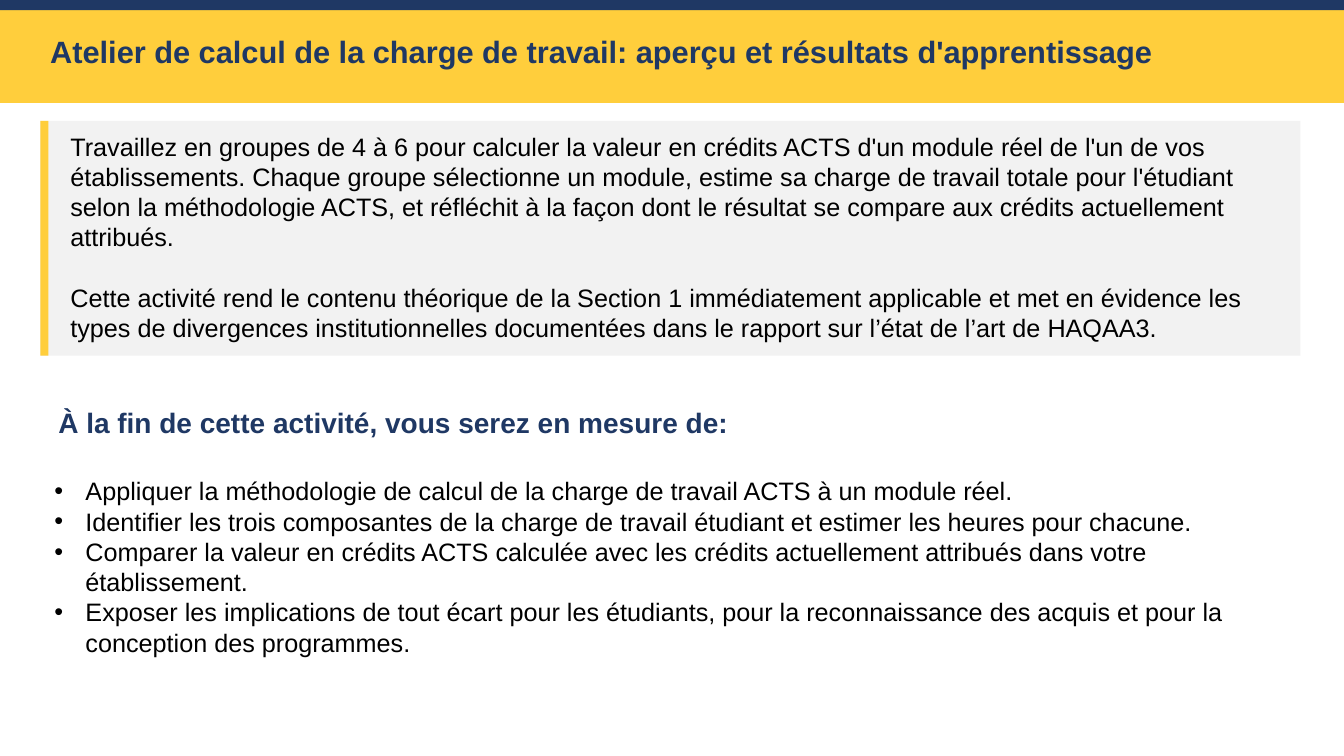
from dataclasses import dataclass

from lxml.etree import SubElement
from pptx import Presentation
from pptx.dml.color import RGBColor
from pptx.enum.shapes import MSO_SHAPE
from pptx.enum.text import MSO_AUTO_SIZE
from pptx.oxml.ns import qn
from pptx.util import Inches, Pt

CELL = Inches(0.1)  # side of one square grid cell
COLUMNS, ROWS = 133.33, 75


@dataclass(frozen=True)
class Theme:
    font: str = "Arial"
    navy: RGBColor = RGBColor(0x1F, 0x38, 0x64)
    yellow: RGBColor = RGBColor(0xFF, 0xCE, 0x3C)
    panel: RGBColor = RGBColor(0xF2, 0xF2, 0xF2)
    text: RGBColor = RGBColor(0, 0, 0)
    title_size: int = 22
    heading_size: int = 20
    body_size: int = 18
    line_height: float = 21.6


@dataclass(frozen=True)
class Box:
    """A rectangle in grid columns and rows."""
    left: float
    top: float
    width: float
    height: float

    def inner(self, left, top, width, height):
        return Box(self.left + left, self.top + top, width, height)

    def lengths(self):
        return [round(cells * CELL)
                for cells in (self.left, self.top, self.width, self.height)]


THEME = Theme()

TITLE = "Atelier de calcul de la charge de travail: aperçu et résultats d'apprentissage"
INTRODUCTION = [
    "Travaillez en groupes de 4 à 6 pour calculer la valeur en crédits ACTS d'un module "
    "réel de l'un de vos établissements. Chaque groupe sélectionne un module, estime sa "
    "charge de travail totale pour l'étudiant selon la méthodologie ACTS, et réfléchit à la "
    "façon dont le résultat se compare aux crédits actuellement attribués.",
    "Cette activité rend le contenu théorique de la Section 1 immédiatement applicable et "
    "met en évidence les types de divergences institutionnelles documentées dans le rapport "
    "sur l’état de l’art de HAQAA3.",
]
OUTCOMES_HEADING = "À la fin de cette activité, vous serez en mesure de:"
OUTCOMES = [
    "Appliquer la méthodologie de calcul de la charge de travail ACTS à un module réel.",
    "Identifier les trois composantes de la charge de travail étudiant et estimer les heures "
    "pour chacune.",
    "Comparer la valeur en crédits ACTS calculée avec les crédits actuellement attribués dans "
    "votre établissement.",
    "Exposer les implications de tout écart pour les étudiants, pour la reconnaissance des "
    "acquis et pour la conception des programmes.",
]


def add_bar(slide, box, color):
    shape = slide.shapes.add_shape(MSO_SHAPE.RECTANGLE, *box.lengths())
    shape.shadow.inherit = False
    shape.fill.solid()
    shape.fill.fore_color.rgb = color
    shape.line.fill.background()


def add_bullet(paragraph, indent=Inches(0.31)):
    properties = paragraph._p.get_or_add_pPr()
    properties.set("marL", str(indent))
    properties.set("indent", str(-indent))
    SubElement(properties, qn("a:buFont"), typeface=THEME.font)
    SubElement(properties, qn("a:buChar"), char="•")


def add_text(slide, box, paragraphs, size=THEME.body_size, color=THEME.text,
             bold=False, bullets=False, gap=0):
    frame = slide.shapes.add_textbox(*box.lengths()).text_frame
    frame.word_wrap = True
    frame.auto_size = MSO_AUTO_SIZE.SHAPE_TO_FIT_TEXT
    for index, text in enumerate(paragraphs):
        paragraph = frame.add_paragraph() if index else frame.paragraphs[0]
        if index and gap:
            paragraph.space_before = Pt(gap)
        if bullets:
            add_bullet(paragraph)
        run = paragraph.add_run()
        run.text = text
        run.font.name = THEME.font
        run.font.size = Pt(size)
        run.font.bold = bold
        run.font.color.rgb = color


def add_header(slide, box):
    add_bar(slide, box, THEME.yellow)
    add_bar(slide, box.inner(0, 0, box.width, 1), THEME.navy)
    add_text(slide, box.inner(4, 2.8, 120, 4.7), [TITLE],
             size=THEME.title_size, color=THEME.navy, bold=True)


def add_introduction(slide, box):
    add_bar(slide, box, THEME.panel)
    add_bar(slide, box.inner(0, 0, 0.8, box.height), THEME.yellow)
    add_text(slide, box.inner(2, 0.5, box.width - 4, 19.2), INTRODUCTION,
             gap=THEME.line_height)


def add_outcomes(slide, box):
    add_text(slide, box.inner(0.4, 0, box.width, 4.4), [OUTCOMES_HEADING],
             size=THEME.heading_size, color=THEME.navy, bold=True)
    add_text(slide, box.inner(0, 7, box.width, 19.2), OUTCOMES, bullets=True)


def main():
    presentation = Presentation()
    presentation.slide_width = round(COLUMNS * CELL)
    presentation.slide_height = ROWS * CELL
    slide = presentation.slides.add_slide(presentation.slide_layouts[6])
    add_header(slide, Box(0, 0, COLUMNS, 10.2))
    add_introduction(slide, Box(4, 12, 125, 23.3))
    add_outcomes(slide, Box(4.4, 39.7, 125, 26.2))
    presentation.save("out.pptx")


if __name__ == "__main__":
    main()
